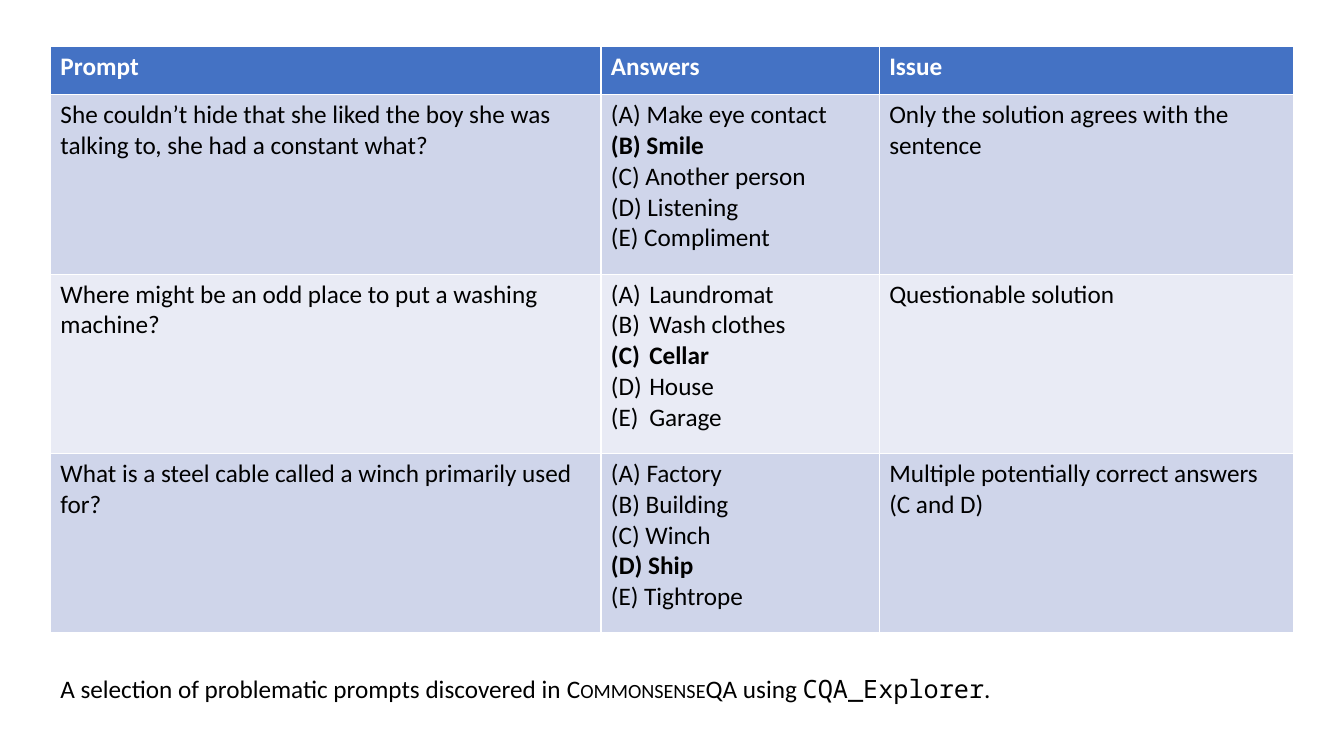
import pptx
import pptx.util
import pptx.dml.color
import pptx.enum.text
import lxml.etree

COLOURS = {"header": "4472C4", "odd": "CFD5EA", "even": "E9EBF5", "light": "FFFFFF", "dark": "000000"}
MARGIN = 0.5
COLUMN_WIDTHS = [5.46, 2.76, 4.11]
HEADER_HEIGHT, ROW_HEIGHT = 0.48, 1.78
NUMBER_INDENT = pptx.util.Inches(0.38)

HEADINGS = ["Prompt", "Answers", "Issue"]
QUESTIONS = [
    ("She couldn’t hide that she liked the boy she was talking to, she had a constant what?",
     ["Make eye contact", "Smile", "Another person", "Listening", "Compliment"],
     "Smile", "Only the solution agrees with the sentence", False),
    ("Where might be an odd place to put a washing machine?",
     ["Laundromat", "Wash clothes", "Cellar", "House", "Garage"],
     "Cellar", "Questionable solution", True),
    ("What is a steel cable called a winch primarily used for?",
     ["Factory", "Building", "Winch", "Ship", "Tightrope"],
     "Ship", "Multiple potentially correct answers (C and D)", False),
]


def add_span(para, text, colour="dark", bold=False, font="Calibri"):
    span = para.add_run()
    span.text = text
    span.font.name = font
    span.font.size = pptx.util.Pt(18)
    span.font.bold = bold
    span.font.color.rgb = pptx.dml.color.RGBColor.from_string(COLOURS[colour])
    return span


def fill_cell(cell, colour):
    cell.fill.solid()
    cell.fill.fore_color.rgb = pptx.dml.color.RGBColor.from_string(COLOURS[colour])
    return cell.text_frame.paragraphs[0]


deck = pptx.Presentation()
deck.slide_width = pptx.util.Inches(13.33)
deck.slide_height = pptx.util.Inches(7.5)
page = deck.slides.add_slide(deck.slide_layouts[6])

table_width = sum(COLUMN_WIDTHS)
table_height = HEADER_HEIGHT + ROW_HEIGHT * len(QUESTIONS)
table = page.shapes.add_table(
    len(QUESTIONS) + 1, len(HEADINGS),
    pptx.util.Inches(MARGIN), pptx.util.Inches(0.46),
    pptx.util.Inches(table_width), pptx.util.Inches(table_height)).table
for column, width in zip(table.columns, COLUMN_WIDTHS):
    column.width = pptx.util.Inches(width)
for index, row in enumerate(table.rows):
    row.height = pptx.util.Inches(ROW_HEIGHT if index else HEADER_HEIGHT)

for column, heading in enumerate(HEADINGS):
    add_span(fill_cell(table.cell(0, column), "header"), heading, "light", True)

for row, (prompt, answers, solution, issue, numbered) in enumerate(QUESTIONS, 1):
    band = "odd" if row % 2 else "even"
    add_span(fill_cell(table.cell(row, 0), band), prompt)
    add_span(fill_cell(table.cell(row, 2), band), issue)

    answer_cell = table.cell(row, 1)
    para = fill_cell(answer_cell, band)
    for position, (letter, answer) in enumerate(zip("ABCDE", answers)):
        if position:
            para = answer_cell.text_frame.add_paragraph()
        if numbered:
            properties = para._p.get_or_add_pPr()
            properties.set("marL", str(NUMBER_INDENT))
            properties.set("indent", str(-NUMBER_INDENT))
            numbering = lxml.etree.SubElement(properties, pptx.oxml.ns.qn("a:buAutoNum"))
            numbering.set("type", "alphaUcParenBoth")
        label = answer if numbered else f"({letter}) {answer}"
        add_span(para, label, bold=answer == solution)

caption = page.shapes.add_textbox(
    pptx.util.Inches(MARGIN), pptx.util.Inches(6.63),
    pptx.util.Inches(table_width), pptx.util.Inches(0.4))
caption.text_frame.word_wrap = True
caption.text_frame.auto_size = pptx.enum.text.MSO_AUTO_SIZE.SHAPE_TO_FIT_TEXT
para = caption.text_frame.paragraphs[0]
add_span(para, "A selection of problematic prompts discovered in ")
dataset = add_span(para, "CommonsenseQA")
dataset._r.get_or_add_rPr().set("cap", "small")
add_span(para, " using ")
add_span(para, "CQA_Explorer", font="Noto Sans Mono")
add_span(para, ".")

deck.save("out.pptx")
